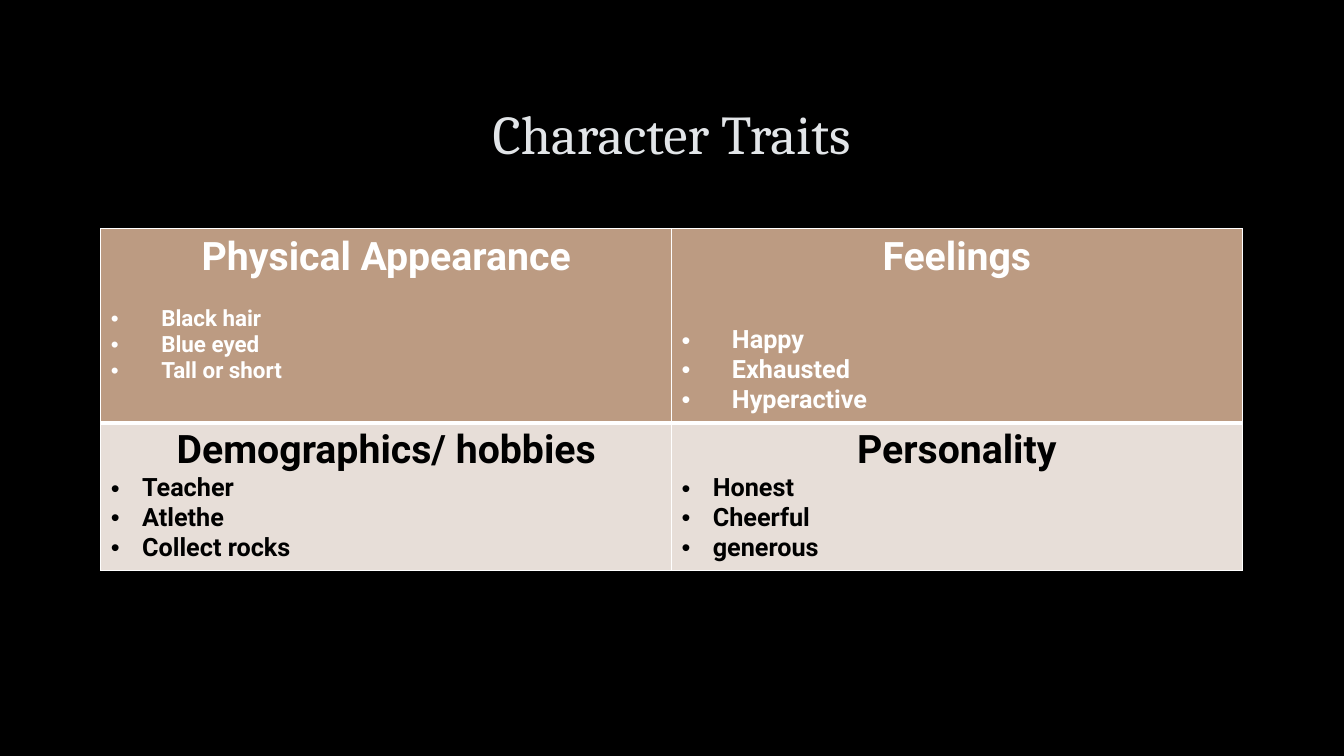
"""Build the Character Traits slide: a title above a two-by-two table."""
from lxml import etree
from pptx import Presentation, util as u
from pptx.dml.color import RGBColor
from pptx.enum import text
from pptx.oxml import ns

BLACK = RGBColor(0x00, 0x00, 0x00)
WHITE = RGBColor(0xFF, 0xFF, 0xFF)
SILVER = RGBColor(0xE2, 0xE5, 0xE8)
TAN = RGBColor(0xBC, 0x9B, 0x82)
CREAM = RGBColor(0xE7, 0xDE, 0xD8)

WIDTH, HEIGHT = u.Inches(13.33), u.Inches(7.5)
MARGIN = u.Inches(1)
CONTENT_WIDTH = u.Inches(11.32)
TITLE_TOP, TITLE_HEIGHT = u.Inches(0.67), u.Inches(1.38)
TABLE_TOP = u.Inches(2.27)
HEADING_SIZE = 28

ROWS = [
    {"height": 1.89, "fill": TAN, "color": WHITE, "indent": 0.5,
     "borders": {"L": 1, "R": 1, "T": 1, "B": 3},
     "cells": [("Physical Appearance", 16, 18.75, ["Black hair", "Blue eyed", "Tall or short"]),
               ("Feelings", 18, 32.8, ["Happy", "Exhausted", "Hyperactive"])]},
    {"height": 1.45, "fill": CREAM, "color": BLACK, "indent": 0.31,
     "borders": {"L": 1, "R": 1, "T": 3, "B": 1},
     "cells": [("Demographics/ hobbies", 18, 0, ["Teacher", "Atlethe", "Collect rocks"]),
               ("Personality", 18, 0, ["Honest", "Cheerful", "generous"])]},
]


def add_element(parent, tag, **attributes):
    """Append a drawing element with the given attributes."""
    return etree.SubElement(parent, ns.qn(tag), attributes)


def set_font(paragraph, name, size, color, bold=False):
    """Set the font of a whole paragraph."""
    font = paragraph.font
    font.name, font.size, font.bold = name, u.Pt(size), bold
    font.color.rgb = color


def set_bullet(paragraph, indent):
    """Give a paragraph a round bullet with a hanging indent."""
    properties = paragraph._p.get_or_add_pPr()
    properties.set("marL", str(u.Inches(indent)))
    properties.set("indent", str(-u.Inches(indent)))
    add_element(properties, "a:buFont", typeface="Arial")
    add_element(properties, "a:buChar", char="•")


def set_borders(cell, widths):
    """Draw white borders of the given point widths, keyed by side."""
    properties = cell._tc.get_or_add_tcPr()
    for side, width in widths.items():
        line = add_element(properties, f"a:ln{side}", w=str(u.Pt(width)))
        fill = add_element(line, "a:solidFill")
        add_element(fill, "a:srgbClr", val=str(WHITE))


def add_title(slide, title):
    """Add the centred slide title."""
    frame = slide.shapes.add_textbox(MARGIN, TITLE_TOP, CONTENT_WIDTH, TITLE_HEIGHT).text_frame
    frame.word_wrap = True
    frame.vertical_anchor = text.MSO_ANCHOR.MIDDLE
    paragraph = frame.paragraphs[0]
    paragraph.text = title
    paragraph.alignment = text.PP_ALIGN.CENTER
    paragraph.line_spacing = 0.9
    set_font(paragraph, "Cambria", 39, SILVER)


def fill_cell(cell, row, heading, size, gap, items):
    """Write a heading and its bulleted items into one cell."""
    set_borders(cell, row["borders"])
    cell.fill.solid()
    cell.fill.fore_color.rgb = row["fill"]
    frame = cell.text_frame
    paragraph = frame.paragraphs[0]
    paragraph.text = heading
    paragraph.alignment = text.PP_ALIGN.CENTER
    paragraph.space_after = u.Pt(gap)
    set_font(paragraph, "Roboto", HEADING_SIZE, row["color"], bold=True)
    for item in items:
        paragraph = frame.add_paragraph()
        paragraph.text = item
        set_bullet(paragraph, row["indent"])
        set_font(paragraph, "Roboto", size, row["color"], bold=True)


def add_traits_table(slide):
    """Add the table of character traits."""
    height = u.Inches(sum(row["height"] for row in ROWS))
    table = slide.shapes.add_table(len(ROWS), 2, MARGIN, TABLE_TOP, CONTENT_WIDTH, height).table
    for row_index, row in enumerate(ROWS):
        table.rows[row_index].height = u.Inches(row["height"])
        for column_index, content in enumerate(row["cells"]):
            fill_cell(table.cell(row_index, column_index), row, *content)


def main():
    """Create and save the presentation."""
    presentation = Presentation()
    presentation.slide_width, presentation.slide_height = WIDTH, HEIGHT
    slide = presentation.slides.add_slide(presentation.slide_layouts[6])
    slide.background.fill.solid()
    slide.background.fill.fore_color.rgb = BLACK
    add_title(slide, "Character Traits")
    add_traits_table(slide)
    presentation.save("out.pptx")


if __name__ == "__main__":
    main()
